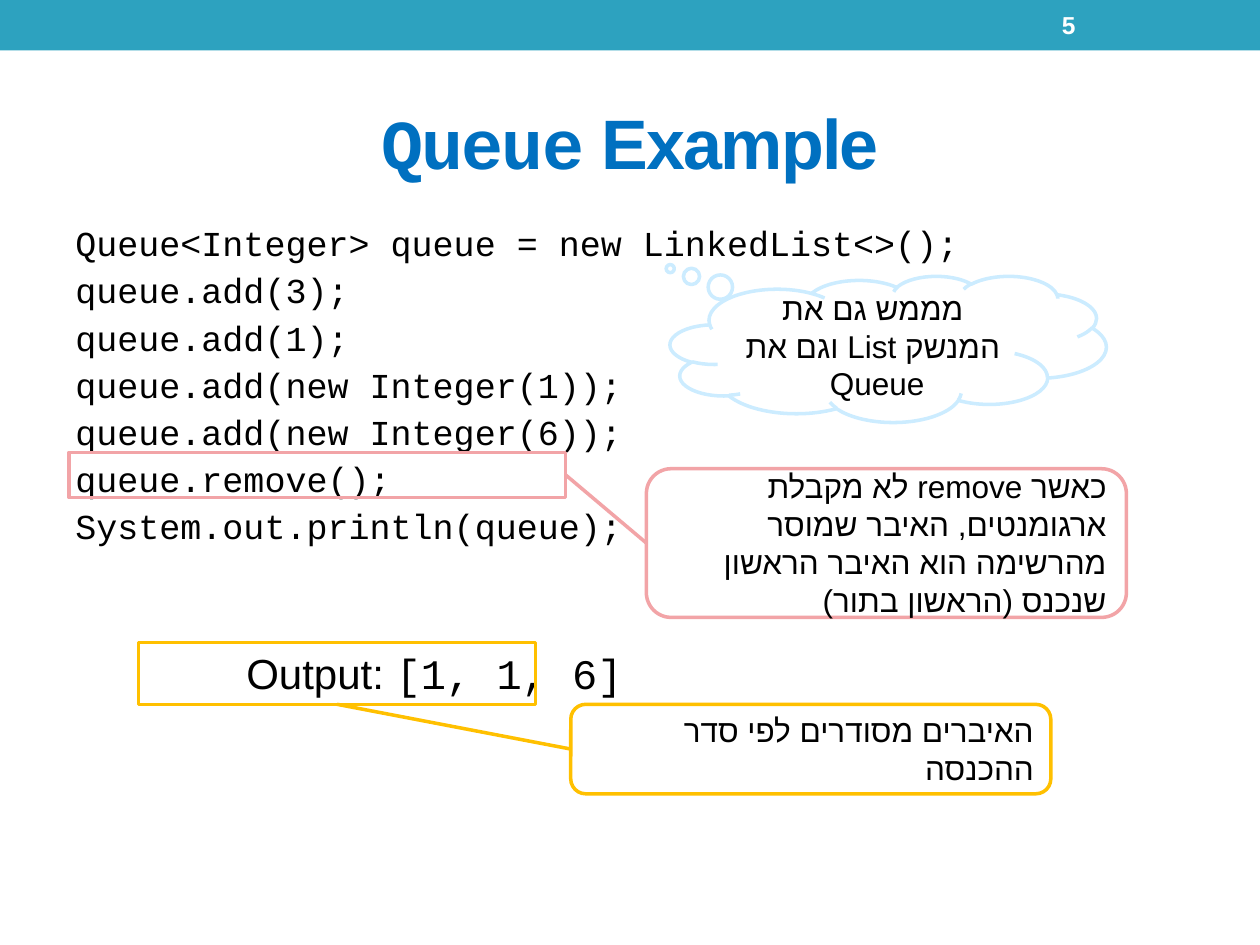
from lxml import etree
from pptx import Presentation
from pptx import util as u
from pptx.dml.color import RGBColor
from pptx.enum import shapes, text
from pptx.oxml import ns

BLACK = RGBColor(0, 0, 0)
WHITE = RGBColor(255, 255, 255)
TEAL = RGBColor(0x2D, 0xA2, 0xBF)
BLUE = RGBColor(0x00, 0x70, 0xC0)
PINK = RGBColor(0xF2, 0xA4, 0xA7)
GOLD = RGBColor(0xFF, 0xC0, 0x00)
PALE_BLUE = RGBColor(0xCC, 0xEC, 0xFF)
SANS, MONO = "Arial", "Courier New"
LEFT, CENTER, RIGHT = text.PP_ALIGN.LEFT, text.PP_ALIGN.CENTER, text.PP_ALIGN.RIGHT
SHAPE = shapes.MSO_SHAPE

TITLE = [("Queue", MONO), (" Example", SANS)]
CODE = [
    "Queue<Integer> queue = new LinkedList<>();",
    "queue.add(3);",
    "queue.add(1);",
    "queue.add(new Integer(1));",
    "queue.add(new Integer(6));",
    "queue.remove();",
    "System.out.println(queue);",
]
OUTPUT = [("Output: ", SANS), ("[1, 1, 6]", MONO)]
CLOUD = "מממש גם את המנשק List וגם את Queue "
CALLOUTS = [
    {
        "color": PINK,
        "frame": (0.55, 3.59, 3.94, 0.36),
        "note": (5.13, 3.72, 3.81, 1.18),
        "frame_site": 3,
        "text": "כאשר remove לא מקבלת ארגומנטים, האיבר שמוסר מהרשימה הוא האיבר הראשון שנכנס (הראשון בתור)",
    },
    {
        "color": GOLD,
        "frame": (1.1, 5.1, 3.15, 0.49),
        "note": (4.53, 5.59, 3.81, 0.71),
        "frame_site": 2,
        "text": "האיברים מסודרים לפי סדר ההכנסה",
    },
]
NOTE_LEFT_SITE = 1


def inches(box):
    return [u.Inches(length) for length in box]


def write(shape, paragraphs, size=18, color=BLACK, bold=False, align=LEFT, rtl=True,
          anchor=text.MSO_ANCHOR.MIDDLE, line_spacing=None, space_before=0, tracking=0):
    frame = shape.text_frame
    frame.word_wrap = True
    frame.auto_size = text.MSO_AUTO_SIZE.NONE
    frame.vertical_anchor = anchor
    for index, pieces in enumerate(paragraphs):
        paragraph = frame.add_paragraph() if index else frame.paragraphs[0]
        paragraph.alignment = align
        paragraph.line_spacing = line_spacing
        paragraph.space_before = u.Pt(space_before)
        paragraph._p.get_or_add_pPr().set("rtl", str(int(rtl)))
        for words, font_name in pieces:
            run = paragraph.add_run()
            run.text = words
            run.font.name = font_name
            run.font.size = u.Pt(size)
            run.font.bold = bold
            run.font.color.rgb = color
            properties = run._r.get_or_add_rPr()
            etree.SubElement(properties, ns.qn("a:cs")).set("typeface", font_name)
            if tracking:
                properties.set("spc", str(tracking * 100))


def add_text(slide, box, paragraphs, **formatting):
    shape = slide.shapes.add_textbox(*inches(box))
    write(shape, paragraphs, **formatting)


def add_shape(slide, kind, box, line=None, fill=None):
    shape = slide.shapes.add_shape(kind, *inches(box))
    shape.shadow.inherit = False
    if fill is None:
        shape.fill.background()
    else:
        shape.fill.solid()
        shape.fill.fore_color.rgb = fill
    if line is None:
        shape.line.fill.background()
    else:
        shape.line.color.rgb = line
        shape.line.width = u.Pt(2)
    return shape


def add_callout(slide, callout):
    color = callout["color"]
    frame = add_shape(slide, SHAPE.RECTANGLE, callout["frame"], line=color)
    note = add_shape(slide, SHAPE.ROUNDED_RECTANGLE, callout["note"], line=color)
    write(note, [[(callout["text"], SANS)]], align=RIGHT)
    connector = slide.shapes.add_connector(shapes.MSO_CONNECTOR.STRAIGHT, 0, 0, 0, 0)
    connector.begin_connect(frame, callout["frame_site"])
    connector.end_connect(note, NOTE_LEFT_SITE)
    connector.line.color.rgb = color
    connector.line.width = u.Pt(2)
    etree.SubElement(connector._element.spPr, ns.qn("a:effectLst"))


def main():
    presentation = Presentation()
    presentation.slide_width, presentation.slide_height = u.Inches(10), u.Inches(7.5)
    slide = presentation.slides.add_slide(presentation.slide_layouts[5])

    add_shape(slide, SHAPE.RECTANGLE, (0, 0, 10, 0.4), fill=TEAL)
    add_text(slide, (8.33, 0.02, 1.17, 0.36), [[("5", SANS)]], size=14, color=WHITE, bold=True)

    title = slide.shapes.title
    title.left, title.top, title.width, title.height = inches((0.5, 0.58, 9, 1.08))
    write(title, [TITLE], size=40, color=BLUE, bold=True, align=CENTER, tracking=-1)

    add_text(slide, (0.5, 1.75, 9, 5.33), [[(line, MONO)] for line in CODE], size=20,
             rtl=False, anchor=text.MSO_ANCHOR.TOP, line_spacing=0.9, space_before=5.3)
    add_text(slide, (1.1, 5.09, 3.94, 0.5), [OUTPUT], size=24, align=RIGHT,
             anchor=text.MSO_ANCHOR.TOP)

    cloud = add_shape(slide, SHAPE.CLOUD_CALLOUT, (5.32, 2.19, 3.46, 1.16), line=PALE_BLUE)
    cloud.adjustments[0], cloud.adjustments[1] = -0.5, -0.55
    write(cloud, [[(CLOUD, SANS)]], align=CENTER)

    for callout in CALLOUTS:
        add_callout(slide, callout)

    presentation.save("out.pptx")


if __name__ == "__main__":
    main()
